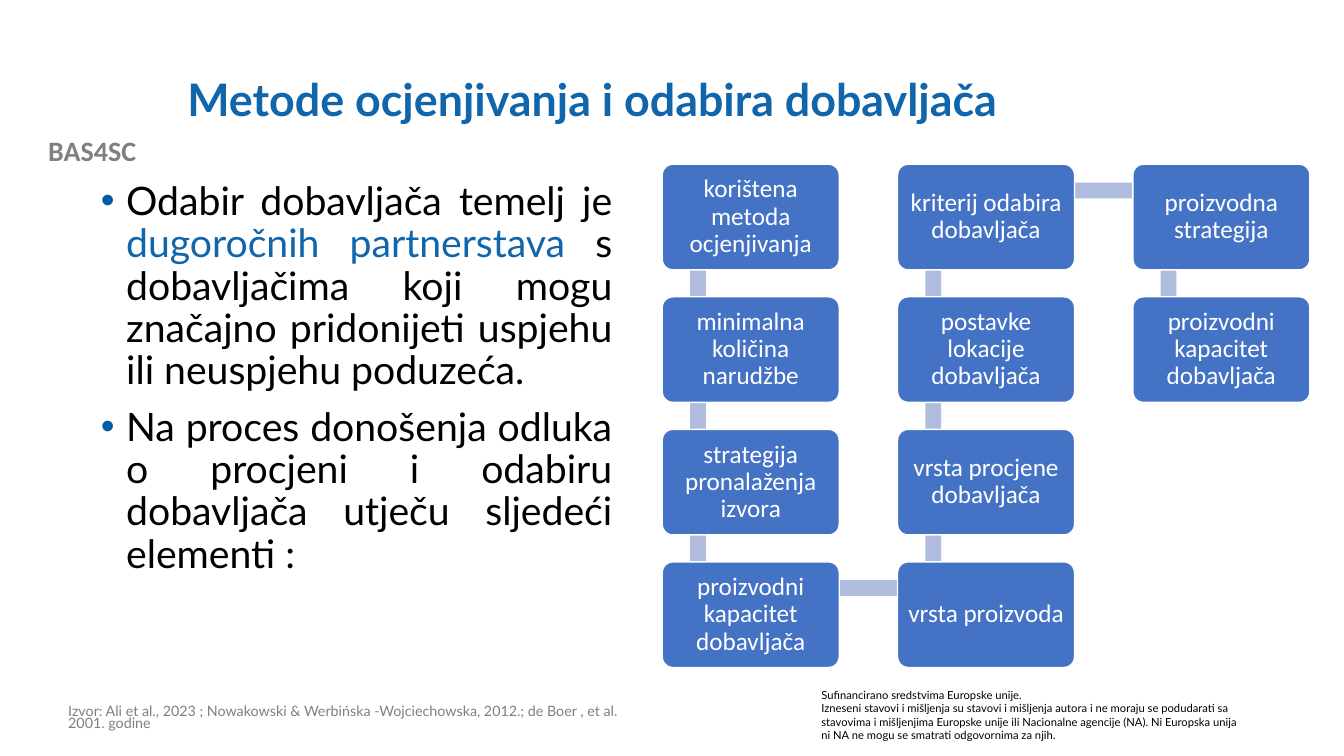
"""Build the slide on methods of supplier evaluation and selection."""
from lxml import etree
from pptx import Presentation
from pptx.dml.color import RGBColor
from pptx.enum.shapes import MSO_SHAPE
from pptx.enum.text import MSO_ANCHOR, PP_ALIGN
from pptx.oxml.ns import qn
from pptx.util import Cm, Pt

LEFT, CENTER, JUSTIFY = PP_ALIGN.LEFT, PP_ALIGN.CENTER, PP_ALIGN.JUSTIFY
TOP, MIDDLE = MSO_ANCHOR.TOP, MSO_ANCHOR.MIDDLE
BAR, CARD = MSO_SHAPE.RECTANGLE, MSO_SHAPE.ROUNDED_RECTANGLE

BLACK, WHITE, BLUE = "000000", "FFFFFF", "1065AB"
CARD_FILL, BAR_FILL, BULLET_BLUE = "4472C4", "B0BCDE", "015BA6"

CARD_LEFT, CARD_TOP, CARD_WIDTH, CARD_HEIGHT = 16.69, 4.14, 4.46, 2.66
COLUMN_STEP, ROW_STEP, ROWS = 5.93, 3.34, 4
BAR_THICKNESS = 0.4

ELEMENTS = [
    "korištena metoda ocjenjivanja",
    "minimalna količina narudžbe",
    "strategija pronalaženja izvora",
    "proizvodni kapacitet dobavljača",
    "vrsta proizvoda",
    "vrsta procjene dobavljača",
    "postavke lokacije dobavljača",
    "kriterij odabira dobavljača",
    "proizvodna strategija",
    "proizvodni kapacitet dobavljača",
]
BODY = [
    [
        ("Odabir dobavljača temelj je ", BLACK),
        ("dugoročnih partnerstava ", BLUE),
        ("s dobavljačima koji mogu značajno pridonijeti uspjehu ili neuspjehu poduzeća.", BLACK),
    ],
    "Na proces donošenja odluka o procjeni i odabiru dobavljača utječu sljedeći elementi :",
]
FUNDING = [
    "Sufinancirano sredstvima Europske unije.",
    "Izneseni stavovi i mišljenja su stavovi i mišljenja autora i ne moraju se podudarati sa "
    "stavovima i mišljenjima Europske unije ili Nacionalne agencije (NA). Ni Europska unija "
    "ni NA ne mogu se smatrati odgovornima za njih.",
]
SOURCE = (
    "Izvor: Ali et al., 2023 ; Nowakowski & Werbińska -Wojciechowska, 2012.; "
    "de Boer , et al. 2001. godine"
)


def color(value):
    """Turn a hex string into a colour."""
    return RGBColor.from_string(value)


def add_bullet(paragraph):
    """Give a paragraph a hanging blue bullet."""
    properties = paragraph._p.get_or_add_pPr()
    properties.set("marL", str(Cm(0.64)))
    properties.set("indent", str(-Cm(0.64)))
    tint = etree.SubElement(properties, qn("a:buClr"))
    etree.SubElement(tint, qn("a:srgbClr")).set("val", BULLET_BLUE)
    etree.SubElement(properties, qn("a:buFont")).set("typeface", "Arial")
    etree.SubElement(properties, qn("a:buChar")).set("char", "•")


def write(frame, paragraphs, size, ink=BLACK, font="Lato", bold=False, align=LEFT,
          anchor=TOP, spacing=1.0, before=0, bullet=False):
    """Fill a text frame with paragraphs given as strings or as coloured spans."""
    frame.word_wrap = True
    frame.vertical_anchor = anchor
    for index, content in enumerate(paragraphs):
        paragraph = frame.add_paragraph() if index else frame.paragraphs[0]
        if bullet:
            add_bullet(paragraph)
        paragraph.alignment = align
        paragraph.line_spacing = spacing
        paragraph.space_before = Pt(before if index else 0)
        spans = [(content, ink)] if isinstance(content, str) else content
        for text, span_ink in spans:
            span = paragraph.add_run()
            span.text = text
            span.font.name = font
            span.font.size = Pt(size)
            span.font.bold = bold
            span.font.color.rgb = color(span_ink)


class Page:
    """Hold the current slide and draw its kinds of element."""

    def __init__(self, deck):
        """Add a blank slide to the deck."""
        self.shapes = deck.slides.add_slide(deck.slide_layouts[6]).shapes

    def text(self, left, top, width, height, paragraphs, **style):
        """Add a text box."""
        box = self.shapes.add_textbox(Cm(left), Cm(top), Cm(width), Cm(height))
        write(box.text_frame, paragraphs, **style)

    def shape(self, kind, left, top, width, height, fill):
        """Add a flat filled shape without outline."""
        shape = self.shapes.add_shape(kind, Cm(left), Cm(top), Cm(width), Cm(height))
        shape.shadow.inherit = False
        shape.fill.solid()
        shape.fill.fore_color.rgb = color(fill)
        shape.line.fill.background()
        return shape

    def bar(self, start, end):
        """Join two neighbouring cards with a bar."""
        left, top = min(start, end)
        if start[0] == end[0]:
            self.shape(BAR, left + 0.7, top + 0.67, BAR_THICKNESS, ROW_STEP, BAR_FILL)
        else:
            self.shape(BAR, left + 0.91, top + 0.46, COLUMN_STEP, BAR_THICKNESS, BAR_FILL)

    def card(self, place, label):
        """Add a rounded card with a centred label."""
        card = self.shape(CARD, *place, CARD_WIDTH, CARD_HEIGHT, CARD_FILL)
        card.adjustments[0] = 0.1
        card.line.color.rgb = color(WHITE)
        card.line.width = Pt(1)
        frame = card.text_frame
        frame.margin_left = frame.margin_right = Cm(0.18)
        frame.margin_top = frame.margin_bottom = Cm(0.18)
        write(frame, [label], size=18, ink=WHITE, font="Calibri", align=CENTER,
              anchor=MIDDLE, spacing=0.9)


def card_place(index):
    """Find a card's corner on a path that runs down one column and up the next."""
    column, step = divmod(index, ROWS)
    row = ROWS - 1 - step if column % 2 else step
    return CARD_LEFT + column * COLUMN_STEP, CARD_TOP + row * ROW_STEP


def main():
    """Build and save the deck."""
    deck = Presentation()
    deck.slide_width, deck.slide_height = Cm(33.87), Cm(19.05)
    page = Page(deck)
    page.text(0, 3.25, 4.65, 1.12, ["BAS4SC"], size=20, ink="808080", font="Calibri",
              bold=True, align=CENTER)
    page.text(20.45, 17.22, 11.1, 1.63, FUNDING, size=8)
    page.text(4.47, 1.02, 27.08, 3.1, ["Metode ocjenjivanja i odabira dobavljača"],
              size=32, ink=BLUE, bold=True, anchor=MIDDLE, spacing=0.9)
    page.text(2.29, 4.45, 13.39, 12.09, BODY, size=28, align=JUSTIFY, spacing=0.9,
              before=10, bullet=True)
    page.text(1.47, 17.68, 14.99, 0.89, [SOURCE], size=10.2, ink="7F7F7F", spacing=0.7)

    places = [card_place(index) for index in range(len(ELEMENTS))]
    for start, end in zip(places, places[1:]):
        page.bar(start, end)
    for place, label in zip(places, ELEMENTS):
        page.card(place, label)
    deck.save("out.pptx")


if __name__ == "__main__":
    main()
